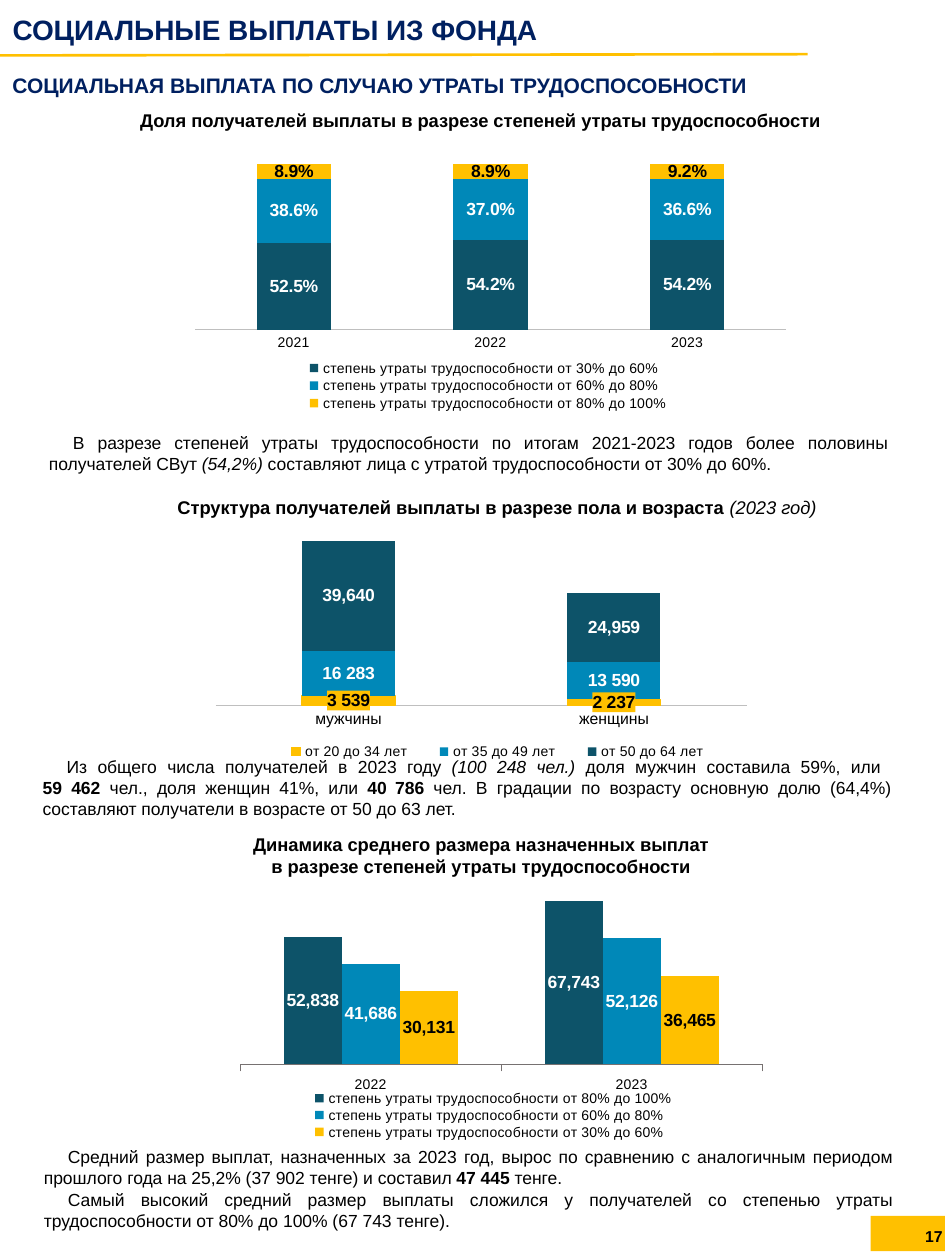
from lxml import etree
from pptx import Presentation
from pptx.chart.data import CategoryChartData
from pptx.dml.color import RGBColor
from pptx.enum.chart import XL_CHART_TYPE, XL_LABEL_POSITION, XL_LEGEND_POSITION, XL_TICK_MARK
from pptx.enum.shapes import MSO_CONNECTOR, MSO_SHAPE
from pptx.enum.text import MSO_ANCHOR, PP_ALIGN
from pptx.oxml import parse_xml
from pptx.oxml.ns import nsdecls, qn
from pptx.util import Inches, Pt

STACKED, CLUSTERED = XL_CHART_TYPE.COLUMN_STACKED, XL_CHART_TYPE.COLUMN_CLUSTERED
LEFT, CENTER, RIGHT, JUSTIFY = PP_ALIGN.LEFT, PP_ALIGN.CENTER, PP_ALIGN.RIGHT, PP_ALIGN.JUSTIFY
TICK_NONE, TICK_OUT = XL_TICK_MARK.NONE, XL_TICK_MARK.OUTSIDE
LABEL_CENTER = XL_LABEL_POSITION.CENTER
LEGEND_BOTTOM = XL_LEGEND_POSITION.BOTTOM

NAVY = RGBColor(0x00, 0x20, 0x60)
TEAL = RGBColor(0x0D, 0x53, 0x69)
BLUE = RGBColor(0x00, 0x88, 0xB8)
GOLD = RGBColor(0xFF, 0xC0, 0x00)
BLACK = RGBColor(0x00, 0x00, 0x00)
WHITE = RGBColor(0xFF, 0xFF, 0xFF)
LIGHT_GRAY = RGBColor(0xBF, 0xBF, 0xBF)
DARK_GRAY = RGBColor(0x76, 0x71, 0x71)

presentation = Presentation()
presentation.slide_width, presentation.slide_height = Inches(7.5), Inches(10)
slide = presentation.slides.add_slide(presentation.slide_layouts[6])


def add_text(box, paragraphs, size, align=LEFT, bold=None, color=BLACK, indent=0):
    """Each paragraph is a list of (text, style); style holds "b" and/or "i"."""
    shape = slide.shapes.add_textbox(*(Inches(length) for length in box))
    frame = shape.text_frame
    frame.word_wrap = True
    for index, parts in enumerate(paragraphs):
        paragraph = frame.paragraphs[0] if index == 0 else frame.add_paragraph()
        paragraph.alignment = align
        paragraph.font.name, paragraph.font.size = "Arial", Pt(size)
        paragraph.font.bold, paragraph.font.color.rgb = bold, color
        if indent:
            paragraph._p.get_or_add_pPr().set("indent", str(Inches(indent)))
        for text, style in parts:
            if text == "\n":
                paragraph.add_line_break()
                continue
            run = paragraph.add_run()
            run.text = text
            if style:
                run.font.bold, run.font.italic = "b" in style, "i" in style
    return frame


def set_layout(element, x, y, width, height, inner=False):
    """Fix the place of a chart part as fractions of the chart."""
    target = '<c:layoutTarget val="inner"/>' if inner else ""
    layout = parse_xml(
        f'<c:layout {nsdecls("c")}><c:manualLayout>{target}'
        '<c:xMode val="edge"/><c:yMode val="edge"/>'
        f'<c:x val="{x}"/><c:y val="{y}"/><c:w val="{width}"/><c:h val="{height}"/>'
        '</c:manualLayout></c:layout>')
    for old in element.findall(qn("c:layout")):
        element.remove(old)
    # A legend's layout follows its position; a plot area's comes first
    element.insert(0 if inner else 1, layout)


# Header
frame = add_text((0.08, 0.08, 7.19, 0.29), [[("СОЦИАЛЬНЫЕ ВЫПЛАТЫ ИЗ ФОНДА", "")]], 16, bold=True, color=NAVY)
frame.margin_left, frame.margin_right, frame.margin_bottom = Inches(0.02), 0, 0
frame.margin_top = Inches(0.02)
frame.paragraphs[0].space_before = Pt(1.3)
add_text((0, 0.53, 7.05, 0.3), [[("СОЦИАЛЬНАЯ ВЫПЛАТА ПО СЛУЧАЮ УТРАТЫ ТРУДОСПОСОБНОСТИ", "")]],
         12, bold=True, color=NAVY)
header_line = slide.shapes.add_connector(
    MSO_CONNECTOR.STRAIGHT, 0, Inches(0.44), Inches(6.41), Inches(0.43))
header_line.line.color.rgb, header_line.line.width = GOLD, Pt(1.5)
etree.SubElement(header_line._element.spPr, qn("a:effectLst"))

# Chart titles
add_text((0.29, 0.82, 7.05, 0.28),
         [[("Доля получателей выплаты в разрезе степеней утраты трудоспособности", "")]],
         10.5, CENTER, bold=True)
add_text((0.18, 3.89, 7.27, 0.28),
         [[("Структура получателей выплаты в разрезе пола и возраста ", "b"), ("(2023 год)", "i")]],
         10.5, CENTER, indent=0.26)
add_text((0.12, 6.56, 7.18, 0.45),
         [[("Динамика среднего размера назначенных выплат ", "")],
          [("в разрезе степеней утраты трудоспособности ", "")]],
         10.5, CENTER, bold=True, indent=0.26)

# Charts; each series is (name, values, fill, label colour, label format)
DEGREE = "степень утраты трудоспособности от "
LOW, MIDDLE, HIGH = (DEGREE + span for span in ("30% до 60%", "60% до 80%", "80% до 100%"))
PERCENT, THOUSANDS, SPACED = "0.0%", "#,##0", "#\\ ##0"
charts = [
    dict(kind=STACKED, box=(1.01, 1.19, 5.41, 2.15), categories=["2021", "2022", "2023"],
         series=[(LOW, (0.525, 0.542, 0.542), TEAL, WHITE, PERCENT),
                 (MIDDLE, (0.386, 0.37, 0.366), BLUE, WHITE, PERCENT),
                 (HIGH, (0.089, 0.089, 0.092), GOLD, BLACK, PERCENT)],
         maximum=1, gap=165, axis_size=8, axis_line=(LIGHT_GRAY, 0.25), tick=TICK_NONE,
         plot=(0.1, 0.053, 0.866, 0.611), legend=(0.25, 0.77, 0.56, 0.2)),
    dict(kind=STACKED, box=(1.55, 4.05, 4.53, 2.14), categories=["мужчины", "женщины"],
         series=[("от 20 до 34 лет", (3539, 2237), GOLD, BLACK, SPACED),
                 ("от 35 до 49 лет", (16283, 13590), BLUE, WHITE, SPACED),
                 ("от 50 до 64 лет", (39640, 24959), TEAL, WHITE, THOUSANDS)],
         maximum=70000, gap=185, axis_size=9, axis_line=(LIGHT_GRAY, 0.5), tick=TICK_NONE,
         plot=(0.036, 0.006, 0.93, 0.718), legend=(0.12, 0.85, 0.82, 0.09)),
    dict(kind=CLUSTERED, box=(1.76, 6.83, 4.32, 2.27), categories=["2022", "2023"],
         series=[(HIGH, (52838, 67743), TEAL, WHITE, THOUSANDS),
                 (MIDDLE, (41686, 52126), BLUE, WHITE, THOUSANDS),
                 (LOW, (30131, 36465), GOLD, BLACK, THOUSANDS)],
         maximum=80000, gap=150, axis_size=8, axis_line=(DARK_GRAY, 0.25), tick=TICK_OUT,
         plot=(0.034, 0.037, 0.959, 0.675), legend=(0.15, 0.8, 0.7, 0.18)),
]
for item in charts:
    data = CategoryChartData()
    data.categories = item["categories"]
    for name, values, *_ in item["series"]:
        data.add_series(name, values)
    box = [Inches(length) for length in item["box"]]
    chart = slide.shapes.add_chart(item["kind"], *box, data).chart
    chart.has_title = False
    chart.font.name, chart.font.size, chart.font.color.rgb = "Arial", Pt(8), BLACK
    chart.has_legend = True
    chart.legend.position, chart.legend.include_in_layout = LEGEND_BOTTOM, False
    chart.legend.font.name, chart.legend.font.size = "Arial", Pt(8)
    set_layout(chart.legend._element, *item["legend"])
    set_layout(chart._chartSpace.chart.plotArea, *item["plot"], inner=True)

    axis = chart.category_axis
    axis.major_tick_mark, axis.minor_tick_mark = item["tick"], TICK_NONE
    axis.tick_labels.font.size = Pt(item["axis_size"])
    line_color, line_width = item["axis_line"]
    axis.format.line.color.rgb, axis.format.line.width = line_color, Pt(line_width)
    value_axis = chart.value_axis
    value_axis.minimum_scale, value_axis.maximum_scale = 0, item["maximum"]
    value_axis.has_major_gridlines = value_axis.visible = False

    plot = chart.plots[0]
    plot.vary_by_categories = False
    plot.gap_width, plot.overlap = item["gap"], 100 if item["kind"] == STACKED else 0
    for series, (_, _, fill, label_color, number_format) in zip(plot.series, item["series"]):
        series.format.fill.solid()
        series.format.fill.fore_color.rgb = fill
        labels = series.data_labels
        labels.show_value, labels.position = True, LABEL_CENTER
        labels.number_format, labels.number_format_is_linked = number_format, False
        labels.font.name, labels.font.size = "Arial", Pt(10)
        labels.font.bold, labels.font.color.rgb = True, label_color
        if number_format == SPACED and fill == GOLD:
            # Thin bars: outline them and give the labels a filled box
            series.format.line.color.rgb, series.format.line.width = GOLD, Pt(0.75)
            labels._element.find(qn("c:numFmt")).addnext(parse_xml(
                f'<c:spPr {nsdecls("c", "a")}><a:solidFill><a:srgbClr val="{GOLD}"/>'
                '</a:solidFill></c:spPr>'))

# Commentary
add_text((0.29, 3.38, 6.85, 0.44),
         [[("В разрезе степеней утраты трудоспособности по итогам 2021-2023 годов более половины "
            "получателей СВут ", ""), ("(54,2%)", "i"),
           (" составляют лица с утратой трудоспособности от 30% до 60%. ", "")]],
         10, JUSTIFY, indent=0.19)
frame = add_text((0.24, 5.95, 6.93, 0.61),
                 [[("Из общего числа получателей в 2023 году ", ""), ("(100 248 чел.) ", "i"),
                   ("доля мужчин составила 59%, или ", ""), ("\n", ""), ("59 462", "b"),
                   (" чел., доля женщин 41%, или ", ""), ("40", "b"), (" ", "b"), ("786", "b"),
                   (" чел. В градации по возрасту основную долю (64,4%) составляют получатели "
                    "в возрасте от 50 до 63 лет.", "")]],
                 10, JUSTIFY, indent=0.19)
frame.paragraphs[0].runs[6].font.size = Pt(8)
add_text((0.25, 9.05, 6.93, 0.77),
         [[("Средний размер выплат, назначенных за 2023 год, вырос по сравнению с аналогичным "
            "периодом прошлого года на 25,2% (37 902 тенге) и составил ", ""),
           ("47 445 ", "b"), ("тенге.", "")],
          [("Самый высокий средний размер выплаты сложился у получателей со степенью утраты "
            "трудоспособности от 80% до 100% (67 743 тенге). ", "")]],
         10, JUSTIFY, indent=0.19)

# Page number
badge = slide.shapes.add_shape(
    MSO_SHAPE.RECTANGLE, Inches(6.91), Inches(9.65), Inches(0.59), Inches(0.28))
badge.shadow.inherit = False
badge.fill.solid()
badge.fill.fore_color.rgb = GOLD
badge.line.fill.background()
frame = add_text((7.16, 9.64, 0.42, 0.34), [[("17", "")]], 9, RIGHT, bold=True)
frame.vertical_anchor = MSO_ANCHOR.MIDDLE

presentation.save("out.pptx")
